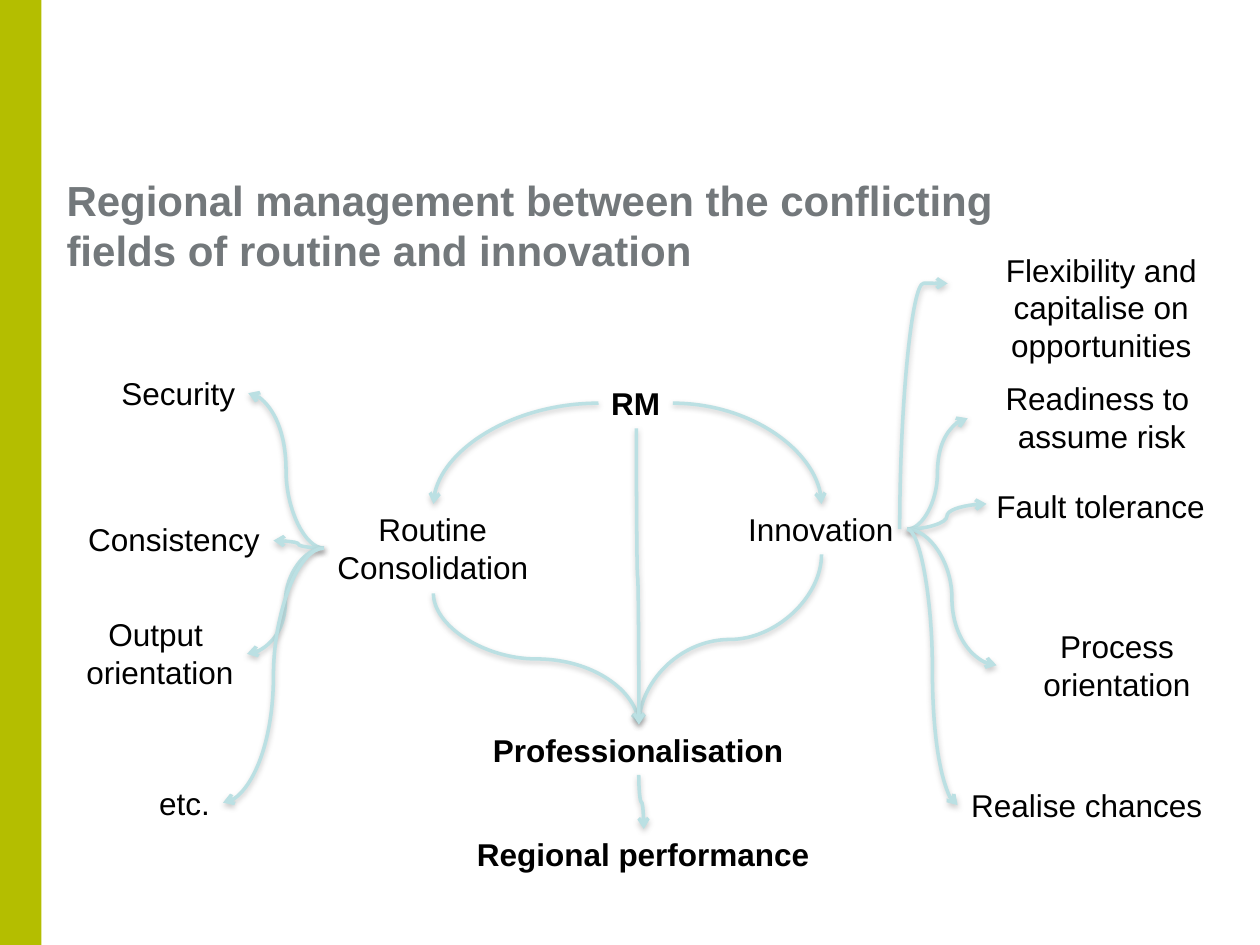
from typing import Any, NamedTuple

from pptx import Presentation
from pptx.dml.color import RGBColor
from pptx.enum.shapes import MSO_CONNECTOR, MSO_SHAPE
from pptx.enum.text import MSO_ANCHOR, MSO_AUTO_SIZE, PP_ALIGN
from pptx.oxml import parse_xml
from pptx.oxml.ns import nsdecls, qn
from pptx.util import Inches, Pt

GREEN = RGBColor(0xB4, 0xBE, 0x00)
GREY = RGBColor(0x73, 0x78, 0x7B)
BLACK = RGBColor(0x00, 0x00, 0x00)
AQUA = RGBColor(0xBB, 0xE0, 0xE3)

FONT = {"name": "Arial", "size": Pt(18), "bold": False}
HEAD = {"name": "Arial", "size": Pt(24), "bold": True}
SHADE = (
    f'<a:effectLst {nsdecls("a")}><a:outerShdw blurRad="40000" dist="20000" '
    'dir="5400000" rotWithShape="0"><a:srgbClr val="808080">'
    '<a:alpha val="38000"/></a:srgbClr></a:outerShdw></a:effectLst>'
)


class Label(NamedTuple):
    text: str
    x: float
    y: float
    w: float
    h: float = 0.4
    bold: bool = False
    wrap: bool = False


class Curve(NamedTuple):
    start: tuple[float, float]
    end: tuple[float, float]
    down: bool = False  # leaves its start vertically
    kind: str = "curvedConnector3"
    bend: int = 50000


LABELS = [
    # Core
    Label("RM", 4.75, 3, 0.59, bold=True),
    Label("Routine\nConsolidation", 2.57, 4, 1.73, 0.71),
    Label("Innovation", 5.83, 4, 1.37),
    Label("Professionalisation", 3.8, 5.75, 2.53, bold=True),
    Label("Regional performance", 3.67, 6.58, 2.87, bold=True),
    # Routine side
    Label("Security", 0.86, 2.92, 1.11),
    Label("Consistency", 0.59, 4.08, 1.58),
    Label("Output \norientation", 0.58, 4.83, 1.38, 0.71),
    Label("etc.", 1.16, 6.17, 0.61),
    # Innovation side
    Label("Flexibility and capitalise on opportunities", 7.6, 1.94, 2.28, 1.01, wrap=True),
    Label("Readiness to \nassume risk", 7.68, 2.96, 2.13, 0.71, wrap=True),
    Label("Fault tolerance", 7.8, 3.82, 1.87),
    Label("Process orientation", 7.91, 4.93, 1.91, 0.71, wrap=True),
    Label("Realise chances", 7.6, 6.19, 2.05),
]

# Points where several curves meet
LEFT, RIGHT, GOAL = (2.57, 4.35), (7.2, 4.2), (5.07, 5.75)
LEFT_ENDS = [(1.97, 3.12), (2.17, 4.29), (1.96, 5.19), (1.77, 6.37)]
RIGHT_ENDS = [(7.68, 3.32), (7.83, 4), (7.91, 5.28), (7.6, 6.39)]
CURVES = [
    Curve((4.75, 3.2), (3.44, 4), kind="curvedConnector2"),
    Curve((5.34, 3.2), (6.52, 4), kind="curvedConnector2"),
    *(Curve(RIGHT, end) for end in RIGHT_ENDS),
    *(Curve(LEFT, end) for end in LEFT_ENDS),
    *(Curve(start, GOAL, True) for start in [(3.44, 4.71), (6.52, 4.4), (5.05, 3.4)]),
    Curve((5.07, 6.15), (5.11, 6.58), True),
    Curve((7.14, 4.2), (7.52, 2.25), True, bend=100100),
]


def style(item: Any, values: dict[str, Any]) -> None:
    for name, value in values.items():
        setattr(item, name, value)


def write(slide: Any, label: Label, font: dict[str, Any], color: RGBColor,
          align: PP_ALIGN, frame: dict[str, Any]) -> None:
    box = slide.shapes.add_textbox(*map(Inches, label[1:5]))
    body = box.text_frame
    body.text = label.text
    style(body, frame)
    for para in body.paragraphs:
        para.alignment = align
        style(para.font, font)
        para.font.color.rgb = color


def draw(slide: Any, curve: Curve) -> None:
    (x1, y1), (x2, y2) = curve.start, curve.end
    dx, dy = x2 - x1, y2 - y1
    wide, high = abs(dx), abs(dy)
    # Turn and mirror the preset so that it runs from start to end
    if curve.down:
        wide, high = high, wide
        fall = dx > 0 and dy > 0
        turn = 270 if fall else 90
        flips = {"flipH": dy < 0 or fall, "flipV": dx > 0 and dy < 0}
    else:
        turn = 180 if dx < 0 else 0
        flips = {"flipV": dx * dy < 0}
    left, top = (x1 + x2 - wide) / 2, (y1 + y2 - high) / 2
    line = slide.shapes.add_connector(
        MSO_CONNECTOR.CURVE, Inches(left), Inches(top),
        Inches(left + wide), Inches(top + high))
    line.line.width = Pt(2)
    line.line.color.rgb = AQUA

    props = line.element.spPr
    frame = props.find(qn("a:xfrm"))
    frame.set("rot", str(turn * 60000))
    for name, flip in flips.items():
        if flip:
            frame.set(name, "1")
    shape = props.find(qn("a:prstGeom"))
    shape.set("prst", curve.kind)
    if curve.kind == "curvedConnector3":
        shape.find(qn("a:avLst")).append(parse_xml(
            f'<a:gd {nsdecls("a")} name="adj1" fmla="val {curve.bend}"/>'))
    props.find(qn("a:ln")).append(
        parse_xml(f'<a:tailEnd {nsdecls("a")} type="arrow"/>'))
    props.append(parse_xml(SHADE))


def main() -> None:
    deck = Presentation()
    style(deck, {"slide_width": Inches(10), "slide_height": Inches(7.5)})
    slide = deck.slides.add_slide(deck.slide_layouts[6])

    # Side bar
    bar = slide.shapes.add_shape(
        MSO_SHAPE.RECTANGLE, 0, 0, Inches(0.33), Inches(7.5))
    bar.shadow.inherit = False
    bar.fill.solid()
    bar.fill.fore_color.rgb = GREEN
    bar.line.fill.background()

    # Title
    title = Label("Regional management between the conflicting fields of "
                  "routine and innovation", 0.43, 1.35, 7.56, 0.87)
    write(slide, title, HEAD, GREY, PP_ALIGN.LEFT,
          {"word_wrap": True, "vertical_anchor": MSO_ANCHOR.MIDDLE})

    # Diagram
    for label in LABELS:
        write(slide, label, FONT | {"bold": label.bold}, BLACK, PP_ALIGN.CENTER,
              {"word_wrap": label.wrap, "auto_size": MSO_AUTO_SIZE.SHAPE_TO_FIT_TEXT})
    for curve in CURVES:
        draw(slide, curve)

    deck.save("out.pptx")


if __name__ == "__main__":
    main()
